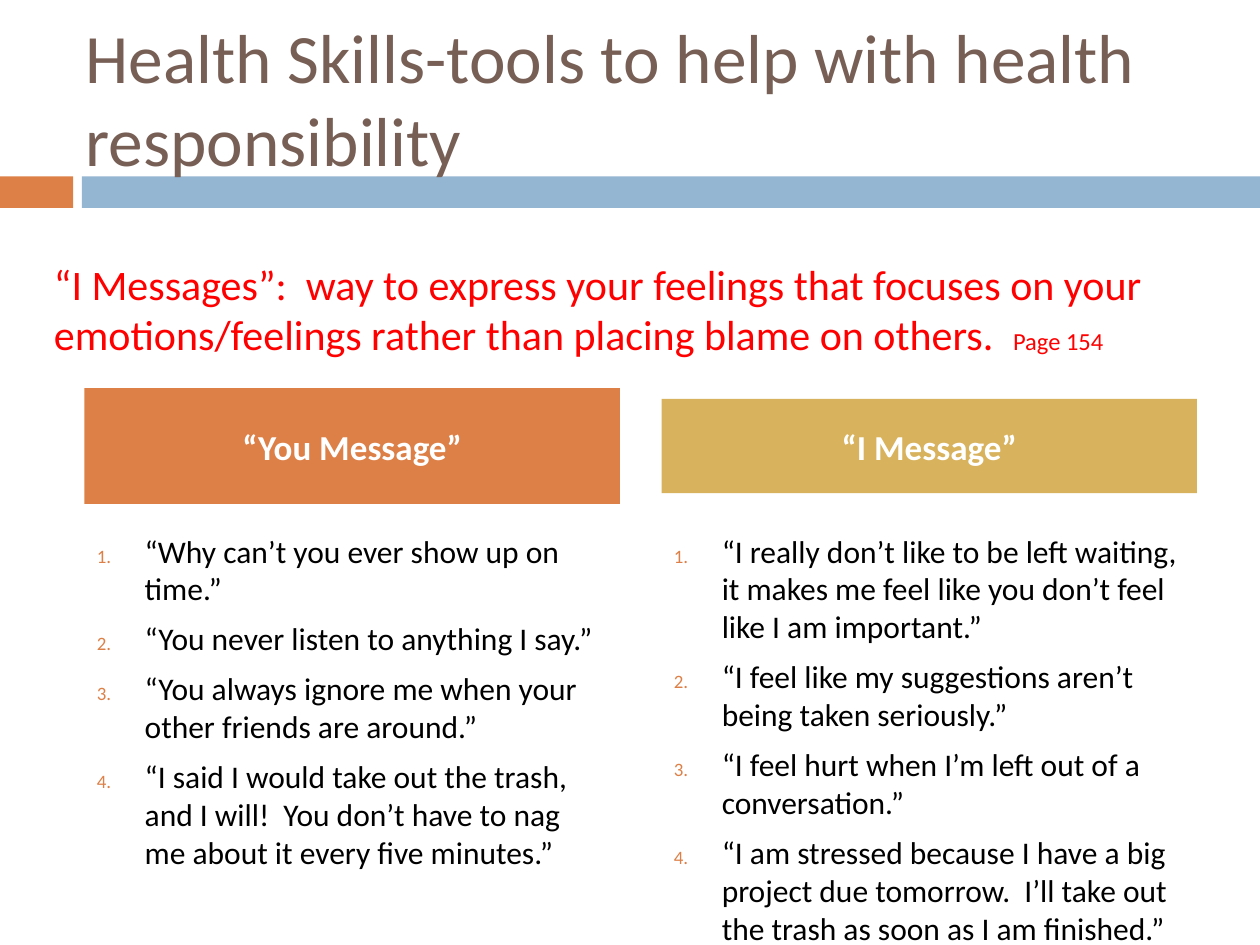
import pptx
import pptx.util
import pptx.dml.color
import pptx.enum.shapes
import pptx.enum.text
import pptx.oxml.ns
from lxml import etree

Inches, Pt = pptx.util.Inches, pptx.util.Pt
ALIGN = pptx.enum.text.PP_ALIGN
ANCHOR = pptx.enum.text.MSO_ANCHOR

COLORS = {"orange": "DD8047", "blue": "94B6D2", "gold": "D8B25C", "brown": "775F55",
          "red": "FF0000", "black": "000000", "white": "FFFFFF"}
FONT = "Calibri"

TITLE = "Health Skills-tools to help with health responsibility"
DEFINITION = [
    ("“I Messages”:  way to express your feelings that focuses on your "
     "emotions/feelings rather than placing blame on others.  ", 24),
    ("Page 154", 14),
]
# heading, heading colour, heading height, list height, list items
COLUMNS = [
    ("“You Message”", "orange", 0.92, 3, [
        "“Why can’t you ever show up on time.”",
        "“You never listen to anything I say.”",
        "“You always ignore me when your other friends are around.”",
        "“I said I would take out the trash, and I will!  You don’t have to nag me "
        "about it every five minutes.”"]),
    ("“I Message”", "gold", 0.75, 3.33, [
        "“I really don’t like to be left waiting, it makes me feel like you don’t "
        "feel like I am important.”",
        "“I feel like my suggestions aren’t being taken seriously.”",
        "“I feel hurt when I’m left out of a conversation.”",
        "“I am stressed because I have a big project due tomorrow.  I’ll take out "
        "the trash as soon as I am finished.”"]),
]

SLIDE_W, SLIDE_H = 10, 7.5
BAND_TOP, BAND_H = 1.4, 0.25
COL_LEFT, COL_W, COL_STEP = 0.67, 4.25, 4.58
HEADING_MIDDLE, LIST_TOP = 3.54, 4.17


def rgb(name):
    return pptx.dml.color.RGBColor.from_string(COLORS[name])


def box(*lengths):
    return [Inches(v) for v in lengths]


def add_run(p, text, size, color, bold=False):
    r = p.add_run()
    r.text = text
    r.font.name, r.font.size, r.font.bold = FONT, Pt(size), bold
    r.font.color.rgb = rgb(color)


def add_rect(s, lengths, color):
    sp = s.shapes.add_shape(pptx.enum.shapes.MSO_SHAPE.RECTANGLE, *box(*lengths))
    sp.shadow.inherit = False
    sp.fill.solid()
    sp.fill.fore_color.rgb = rgb(color)
    sp.line.fill.background()
    return sp


def add_text_frame(s, lengths):
    tf = s.shapes.add_textbox(*box(*lengths)).text_frame
    tf.word_wrap = True
    return tf


def number(p, color):
    """Give the paragraph a hanging, coloured automatic number."""
    pPr = p._p.get_or_add_pPr()
    pPr.set("marL", str(Inches(0.38)))
    pPr.set("indent", str(-Inches(0.38)))
    qn = pptx.oxml.ns.qn
    clr = etree.SubElement(pPr, qn("a:buClr"))
    etree.SubElement(clr, qn("a:srgbClr"), val=COLORS[color])
    etree.SubElement(pPr, qn("a:buSzPct"), val="60000")
    etree.SubElement(pPr, qn("a:buFont"), typeface=FONT)
    etree.SubElement(pPr, qn("a:buAutoNum"), type="arabicPeriod")


def add_column(s, left, heading, color, heading_h, list_h, items):
    sp = add_rect(s, (left, HEADING_MIDDLE - heading_h / 2, COL_W, heading_h), color)
    sp.text_frame.vertical_anchor = ANCHOR.MIDDLE
    p = sp.text_frame.paragraphs[0]
    p.alignment, p.space_before = ALIGN.CENTER, Pt(7)
    add_run(p, heading, 20, "white", bold=True)

    tf = add_text_frame(s, (left, LIST_TOP, COL_W, list_h))
    for i, item in enumerate(items):
        p = tf.add_paragraph() if i else tf.paragraphs[0]
        p.space_before = Pt(7)
        number(p, "orange")
        add_run(p, item, 18, "black")


def main():
    prs = pptx.Presentation()
    prs.slide_width, prs.slide_height = box(SLIDE_W, SLIDE_H)
    s = prs.slides.add_slide(prs.slide_layouts[5])

    add_rect(s, (0, BAND_TOP, 0.58, BAND_H), "orange")
    add_rect(s, (0.65, BAND_TOP, SLIDE_W - 0.65, BAND_H), "blue")

    title = s.shapes.title
    title.left, title.top, title.width, title.height = box(0.58, 0.3, 8.92, 0.95)
    s.shapes._spTree.append(title._element)  # in front of the band
    tf = title.text_frame
    tf.auto_size = pptx.enum.text.MSO_AUTO_SIZE.NONE
    tf.vertical_anchor = ANCHOR.MIDDLE
    tf.paragraphs[0].alignment = ALIGN.LEFT
    add_run(tf.paragraphs[0], TITLE, 39.6, "brown")

    for i, column in enumerate(COLUMNS):
        add_column(s, COL_LEFT + i * COL_STEP, *column)

    tf = add_text_frame(s, (0.33, 2, 9.42, 0.91))
    for text, size in DEFINITION:
        add_run(tf.paragraphs[0], text, size, "red")

    prs.save("out.pptx")


if __name__ == "__main__":
    main()
